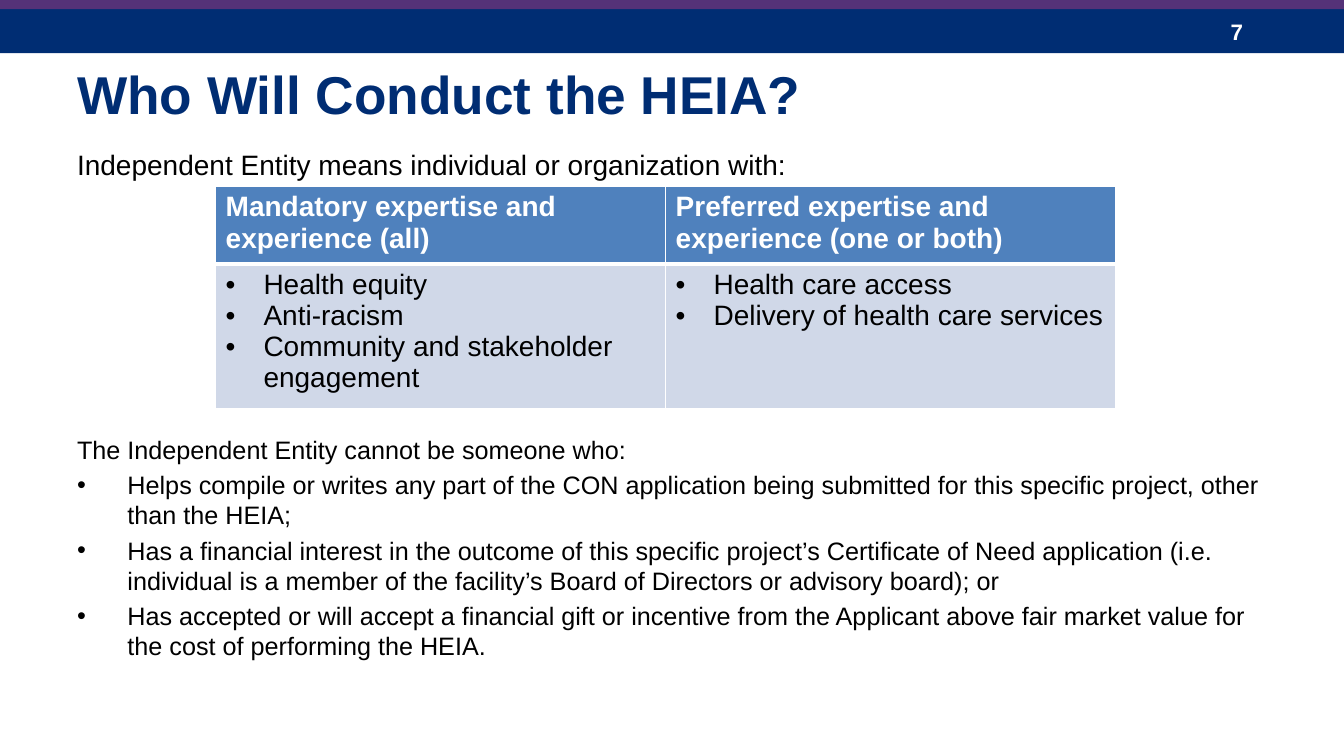
from lxml import etree
from pptx import Presentation
from pptx.dml.color import RGBColor
from pptx.enum.shapes import MSO_SHAPE
from pptx.enum.text import MSO_ANCHOR
from pptx.oxml.ns import qn
from pptx.util import Pt

RECTANGLE = MSO_SHAPE.RECTANGLE
TOP, MIDDLE = MSO_ANCHOR.TOP, MSO_ANCHOR.MIDDLE

NAVY = RGBColor(0x00, 0x2D, 0x73)
PURPLE = RGBColor(0x55, 0x32, 0x78)
BLUE = RGBColor(0x4F, 0x81, 0xBD)
PALE_BLUE = RGBColor(0xD0, 0xD8, 0xE8)
WHITE = RGBColor(0xFF, 0xFF, 0xFF)
BLACK = RGBColor(0x00, 0x00, 0x00)
FONT = "Arial"

# Content
PAGE_NUMBER = "7"
TITLE = "Who Will Conduct the HEIA?"
INTRO = "Independent Entity means individual or organization with:"
EXPERTISE = [
    ("Mandatory expertise and experience (all)",
     ["Health equity", "Anti-racism", "Community and stakeholder engagement"]),
    ("Preferred expertise and experience (one or both)",
     ["Health care access", "Delivery of health care services"]),
]
EXCLUSION_LEAD = "The Independent Entity cannot be someone who:"
EXCLUSIONS = [
    "Helps compile or writes any part of the CON application being submitted "
    "for this specific project, other than the HEIA;",
    "Has a financial interest in the outcome of this specific project’s Certificate of Need "
    "application (i.e. individual is a member of the facility’s Board of Directors "
    "or advisory board); or",
    "Has accepted or will accept a financial gift or incentive from the Applicant "
    "above fair market value for the cost of performing the HEIA.",
]

# Layout in points
SLIDE_WIDTH, SLIDE_HEIGHT = 960, 540
MARGIN = 48
TEXT_WIDTH = SLIDE_WIDTH - 2 * MARGIN
BANDS = [(6.5, 31.5, NAVY), (0, 6.5, PURPLE)]
TABLE_LEFT, TABLE_TOP, COLUMN_WIDTH = 154, 133.2, 321.5
ROW_HEIGHTS = [52, 96]


def add_bullet(paragraph, indent):
    properties = paragraph._p.get_or_add_pPr()
    properties.set("marL", str(Pt(indent)))
    properties.set("indent", str(-Pt(indent)))
    etree.SubElement(properties, qn("a:buFont")).set("typeface", FONT)
    etree.SubElement(properties, qn("a:buChar")).set("char", "•")


def write_text(frame, lines, *, size, color=BLACK, bold=False, indent=0,
               plain_lines=0, space_before=0):
    """Fill a frame with paragraphs; lines after plain_lines get bullets if indent is set."""
    frame.word_wrap = True
    for index, line in enumerate(lines):
        paragraph = frame.paragraphs[0] if index == 0 else frame.add_paragraph()
        if indent and index >= plain_lines:
            add_bullet(paragraph, indent)
        if index:
            paragraph.space_before = Pt(space_before)
        run = paragraph.add_run()
        run.text = line
        run.font.name = FONT
        run.font.size = Pt(size)
        run.font.bold = bold
        run.font.color.rgb = color


def add_text(slide, lines, left, top, width, height, anchor=TOP, **text_format):
    box = slide.shapes.add_textbox(Pt(left), Pt(top), Pt(width), Pt(height))
    box.text_frame.vertical_anchor = anchor
    write_text(box.text_frame, lines, **text_format)


def set_borders(cell, widths):
    properties = cell._tc.get_or_add_tcPr()
    for position, (side, width) in enumerate(widths.items()):
        line = etree.Element(qn(f"a:{side}"), w=str(Pt(width)))
        fill = etree.SubElement(line, qn("a:solidFill"))
        etree.SubElement(fill, qn("a:srgbClr")).set("val", str(WHITE))
        properties.insert(position, line)


def add_expertise_table(slide):
    table = slide.shapes.add_table(
        len(ROW_HEIGHTS), len(EXPERTISE), Pt(TABLE_LEFT), Pt(TABLE_TOP),
        Pt(COLUMN_WIDTH * len(EXPERTISE)), Pt(sum(ROW_HEIGHTS))).table
    for row, height in zip(table.rows, ROW_HEIGHTS):
        row.height = Pt(height)
    for index, (heading, items) in enumerate(EXPERTISE):
        table.columns[index].width = Pt(COLUMN_WIDTH)
        header, body = table.cell(0, index), table.cell(1, index)
        write_text(header.text_frame, [heading], size=20, color=WHITE, bold=True)
        write_text(body.text_frame, items, size=20, indent=27)
        for cell, color, top, bottom in ((header, BLUE, 1, 3), (body, PALE_BLUE, 3, 1)):
            cell.fill.solid()
            cell.fill.fore_color.rgb = color
            set_borders(cell, {"lnL": 1, "lnR": 1, "lnT": top, "lnB": bottom})


def main():
    presentation = Presentation()
    presentation.slide_width = Pt(SLIDE_WIDTH)
    presentation.slide_height = Pt(SLIDE_HEIGHT)
    slide = presentation.slides.add_slide(presentation.slide_layouts[6])

    # Header bands and page number
    for top, height, color in BANDS:
        band = slide.shapes.add_shape(RECTANGLE, 0, Pt(top), Pt(SLIDE_WIDTH), Pt(height))
        band.shadow.inherit = False
        band.fill.solid()
        band.fill.fore_color.rgb = color
        band.line.fill.background()
    add_text(slide, [PAGE_NUMBER], 872, 9.4, 72, 28.8, size=16, color=WHITE, bold=True)

    # Title and introduction
    add_text(slide, [TITLE], MARGIN, 21.6, TEXT_WIDTH, 90, MIDDLE,
             size=38, color=NAVY, bold=True)
    add_text(slide, [INTRO], MARGIN, 102, TEXT_WIDTH, 30, size=20)

    # Expertise table and exclusions
    add_expertise_table(slide)
    add_text(slide, [EXCLUSION_LEAD, *EXCLUSIONS], MARGIN, 306.5, TEXT_WIDTH, 180,
             size=18, indent=36, plain_lines=1, space_before=3.6)

    presentation.save("out.pptx")


if __name__ == "__main__":
    main()
